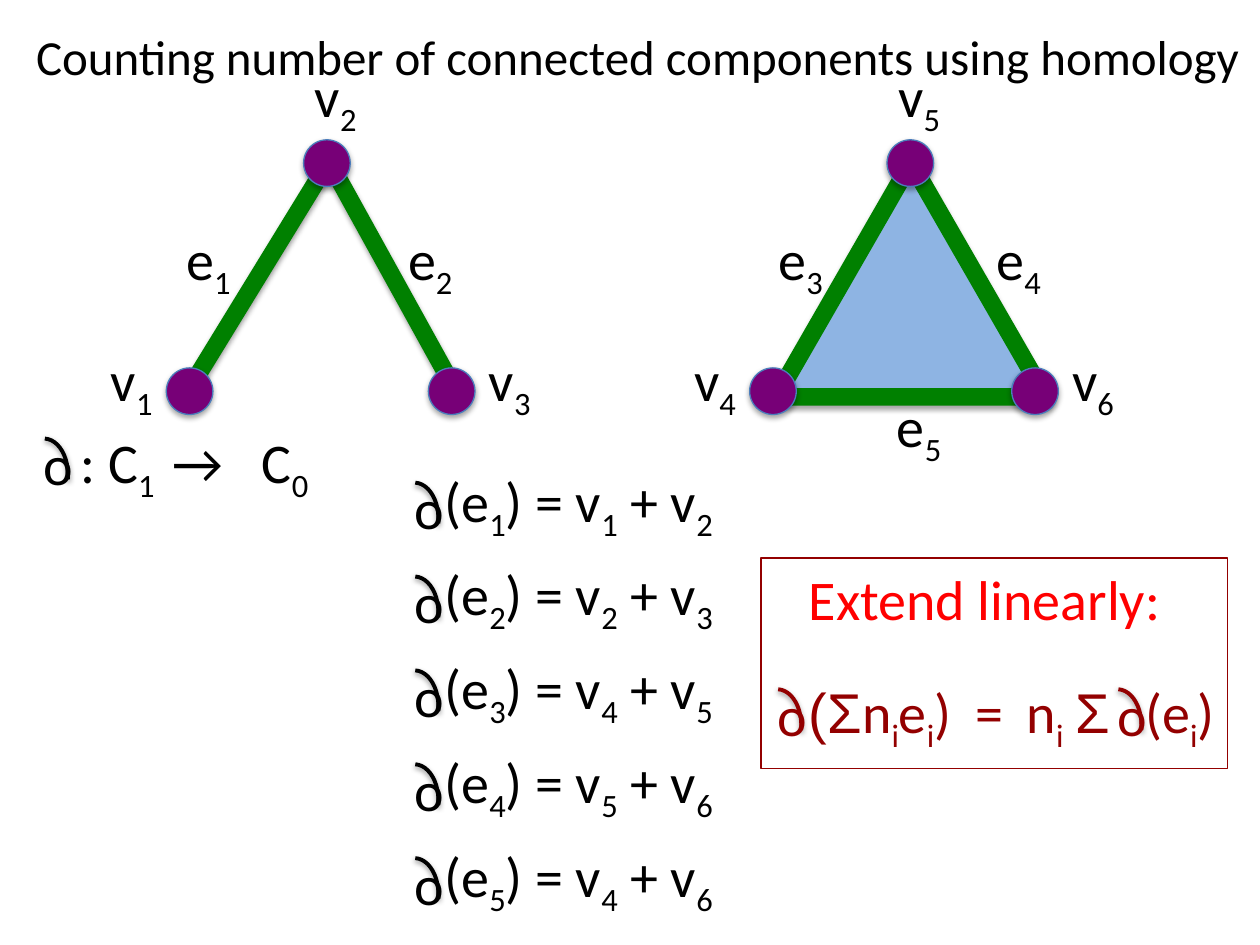
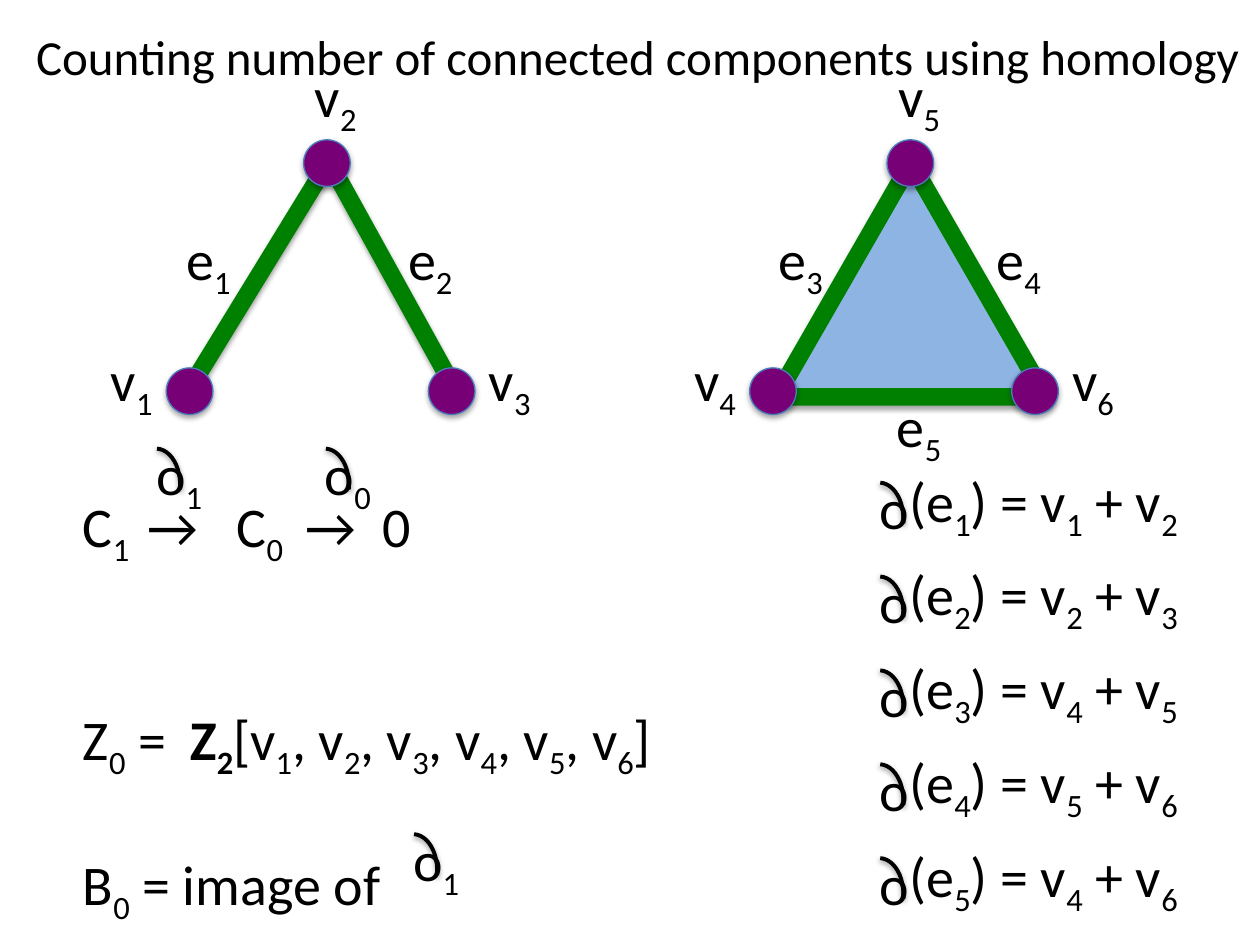
"""Build two slides that count connected components with homology."""
from lxml.etree import SubElement
from pptx import Presentation
from pptx.dml.color import RGBColor
from pptx.enum.shapes import MSO_CONNECTOR, MSO_SHAPE as Shape
from pptx.enum.text import MSO_AUTO_SIZE as AutoSize, PP_ALIGN as Align
from pptx.oxml.ns import qn
from pptx.util import Inches, Pt

WIDTH, HEIGHT = Inches(10), Inches(7.5)
UNIT = WIDTH / 10
COLORS = {
    "ink": "000000", "node": "770077", "node_rim": "4B7EBC", "edge": "008000",
    "face": "8EB4E3", "heading": "FF0000", "rule": "930000",
}
BODY, SYMBOL = "Calibri", "Arial"
BODY_SIZE, TITLE_SIZE = 32, 28
LINE_HEIGHT = BODY_SIZE * 1.22
ROW = 0.64
NODE = 0.37
TITLE = "Counting number of connected components using homology"
BOUNDARIES = [(1, 2), (2, 3), (4, 5), (5, 6), (4, 6)]
BOUNDARY_STEP = 0.745


def units(*lengths):
    """Turn grid columns and rows into slide lengths."""
    return [round(length * UNIT) for length in lengths]


def rgb(name):
    """Look up a palette colour."""
    return RGBColor.from_string(COLORS[name])


def cast_shadow(figure, alpha=35, distance=1.8):
    """Give a shape or connector a soft shadow straight below it."""
    effects = SubElement(figure._element.spPr, qn("a:effectLst"))
    shadow = SubElement(effects, qn("a:outerShdw"), blurRad=str(Pt(3.1)),
                        dist=str(Pt(distance)), dir="5400000", rotWithShape="0")
    black = SubElement(shadow, qn("a:srgbClr"), val=COLORS["ink"])
    SubElement(black, qn("a:alpha"), val=str(alpha * 1000))


def draw(slide, kind, box, line, weight, fill=None):
    """Draw a preset shape without a shadow."""
    figure = slide.shapes.add_shape(kind, *units(*box))
    figure.shadow.inherit = False
    figure.line.color.rgb = rgb(line)
    figure.line.width = Pt(weight)
    if fill:
        figure.fill.solid()
        figure.fill.fore_color.rgb = rgb(fill)
    else:
        figure.fill.background()
    return figure


def draw_shaded(slide, *args, **shadow):
    """Draw a preset shape with a shadow."""
    figure = draw(slide, *args)
    figure._element.spPr.remove(figure._element.spPr.find(qn("a:effectLst")))
    cast_shadow(figure, **shadow)
    return figure


def split_subscripts(markup):
    """Yield text and subscript flag; an underscore lowers the next character."""
    first, *rest = markup.split("_")
    yield first, False
    for piece in rest:
        yield piece[0], True
        yield piece[1:], False


def write_span(paragraph, markup, font=BODY, bold=False, size=BODY_SIZE, color="ink"):
    """Add the runs of one span to a paragraph."""
    for text, lowered in split_subscripts(markup):
        if not text:
            continue
        run = paragraph.add_run()
        run.text = text
        run.font.name, run.font.size, run.font.bold = font, Pt(size), bold
        run.font.color.rgb = rgb(color)
        if lowered:
            run._r.get_or_add_rPr().set("baseline", "-25000")


def set_tabs(paragraph, stops):
    """Set left tab stops, measured from the start of the text."""
    tabs = SubElement(paragraph._p.get_or_add_pPr(), qn("a:tabLst"))
    for stop in units(*stops):
        SubElement(tabs, qn("a:tab"), pos=str(stop), algn="l")


def add_text(slide, box, *lines, align=Align.LEFT, **style):
    """Write lines, each a tuple of spans, tab stops and blank space above in lines."""
    frame = slide.shapes.add_textbox(*units(*box)).text_frame
    frame.word_wrap = True
    frame.auto_size = AutoSize.SHAPE_TO_FIT_TEXT
    for number, (spans, stops, gap) in enumerate(lines):
        paragraph = frame.add_paragraph() if number else frame.paragraphs[0]
        paragraph.alignment = align
        if stops:
            set_tabs(paragraph, stops)
        if gap:
            paragraph.space_before = Pt(gap * LINE_HEIGHT)
        for markup, options in spans:
            write_span(paragraph, markup, **options, **style)


def line_of(markup, stops=(), gap=0):
    """Describe a line that has a single span."""
    return [(markup, {})], stops, gap


def add_label(slide, left, top, markup, width=0.71, **style):
    """Write a one-line label."""
    add_text(slide, (left, top, width, ROW), line_of(markup), **style)


def add_partial(slide, left, top, index="", color="ink"):
    """Draw the boundary sign from an arc over the letter o."""
    hook = draw_shaded(slide, Shape.ARC, (left, top + 0.12, 0.41, 0.62), color, 2.25,
                       alpha=38, distance=1.6)
    hook.rotation = 4
    add_label(slide, left + 0.12, top, f"o_{index}" if index else "o",
              width=0.93 if index else 0.65, color=color)


def add_edge(slide, start, end):
    """Draw one edge of the open graph."""
    edge = slide.shapes.add_connector(MSO_CONNECTOR.STRAIGHT, *units(*start, *end))
    edge.line.color.rgb = rgb("edge")
    edge.line.width = Pt(10)
    cast_shadow(edge, alpha=38, distance=1.6)


def add_vertices(slide, left, first):
    """Draw three vertices, with labels numbered from first."""
    for dx, top in ((0, 2.92), (2.08, 2.92), (1.09, 1.11)):
        draw_shaded(slide, Shape.OVAL, (left + dx, top, NODE, NODE),
                    "node_rim", 0.75, "node")
    for number, (dx, top) in enumerate(((-0.54, 2.69), (1.08, 0.44), (2.46, 2.69)), first):
        add_label(slide, left + dx, top, f"v_{number}")


def add_complexes(slide):
    """Draw the open path and the filled triangle with their labels."""
    draw_shaded(slide, Shape.ISOSCELES_TRIANGLE, (6.16, 1.29, 2.14, 1.86),
                "edge", 10, "face")
    apex = (2.61, 1.28)
    for foot in ((3.61, 3.09), (1.5, 3.09)):
        add_edge(slide, apex, foot)
    add_vertices(slide, 1.32, 1)
    add_vertices(slide, 5.95, 4)
    edge_places = ((1.38, 1.73), (3.14, 1.73), (6.08, 1.73), (7.81, 1.73), (7.02, 3.06))
    for number, (left, top) in enumerate(edge_places, 1):
        add_label(slide, left, top, f"e_{number}")


def add_boundaries(slide, left):
    """List the boundary of every edge."""
    for number, (tail, head) in enumerate(BOUNDARIES, 1):
        top = 3.65 + (number - 1) * BOUNDARY_STEP
        add_partial(slide, left, top + 0.06)
        add_label(slide, left + 0.36, top, f"(e_{number}) = v_{tail} + v_{head}", width=2.6)


def start_slide(deck):
    """Add a slide with the shared title and complexes."""
    slide = deck.slides.add_slide(deck.slide_layouts[6])
    add_complexes(slide)
    add_text(slide, (0.12, 0.16, 9.88, 0.57), line_of(TITLE),
             align=Align.CENTER, size=TITLE_SIZE)
    return slide


def add_linear_rule(slide):
    """Frame the rule that extends the boundary map linearly."""
    add_label(slide, 6.32, 4.43, "Extend linearly:", width=3.4, color="heading")
    symbol = {"font": SYMBOL}
    spans = [("(Σ", symbol), ("n_ie_i)\t=\tn_i", {}), ("\tΣ", symbol), ("\t(e_i)", {})]
    add_text(slide, (6.32, 5.33, 3.49, ROW),
             (spans, (1.32, 1.73, 2.12, 2.67), 0), color="rule")
    for left in (8.65, 5.95):
        add_partial(slide, left, 5.35, color="rule")
    draw(slide, Shape.RECTANGLE, (6.04, 4.43, 3.7, 1.67), "rule", 0.75)


def build_boundary_map(deck):
    """Build the slide that defines the boundary map."""
    slide = start_slide(deck)
    add_text(slide, (0.54, 3.34, 2.22, ROW), line_of(": C_1\t→\tC_0", (0.73, 1.44)))
    add_partial(slide, 0.13, 3.36)
    add_boundaries(slide, 3.07)
    add_linear_rule(slide)


def build_cycles(deck):
    """Build the slide with the chain, its cycles and its boundaries."""
    slide = start_slide(deck)
    vertices = ", ".join(f"v_{number}" for number in range(1, 7))
    cycles = [("Z_0 =\t", {}), ("Z_2", {"bold": True}), (f"[{vertices}]", {})]
    add_text(slide, (0.56, 3.85, 5.93, 3.33),
             line_of("C_1\t→\tC_0\t→\t0", (0.51, 1.22, 1.77, 2.38)),
             (cycles, (0.85,), 2),
             line_of("B_0 = image of", gap=1))
    for left, top, index in ((1.02, 3.44, 1), (2.36, 3.44, 0), (3.06, 6.5, 1)):
        add_partial(slide, left, top, str(index))
    add_boundaries(slide, 6.76)


def main():
    """Build and save the deck."""
    deck = Presentation()
    deck.slide_width, deck.slide_height = WIDTH, HEIGHT
    build_boundary_map(deck)
    build_cycles(deck)
    deck.save("out.pptx")


if __name__ == "__main__":
    main()
